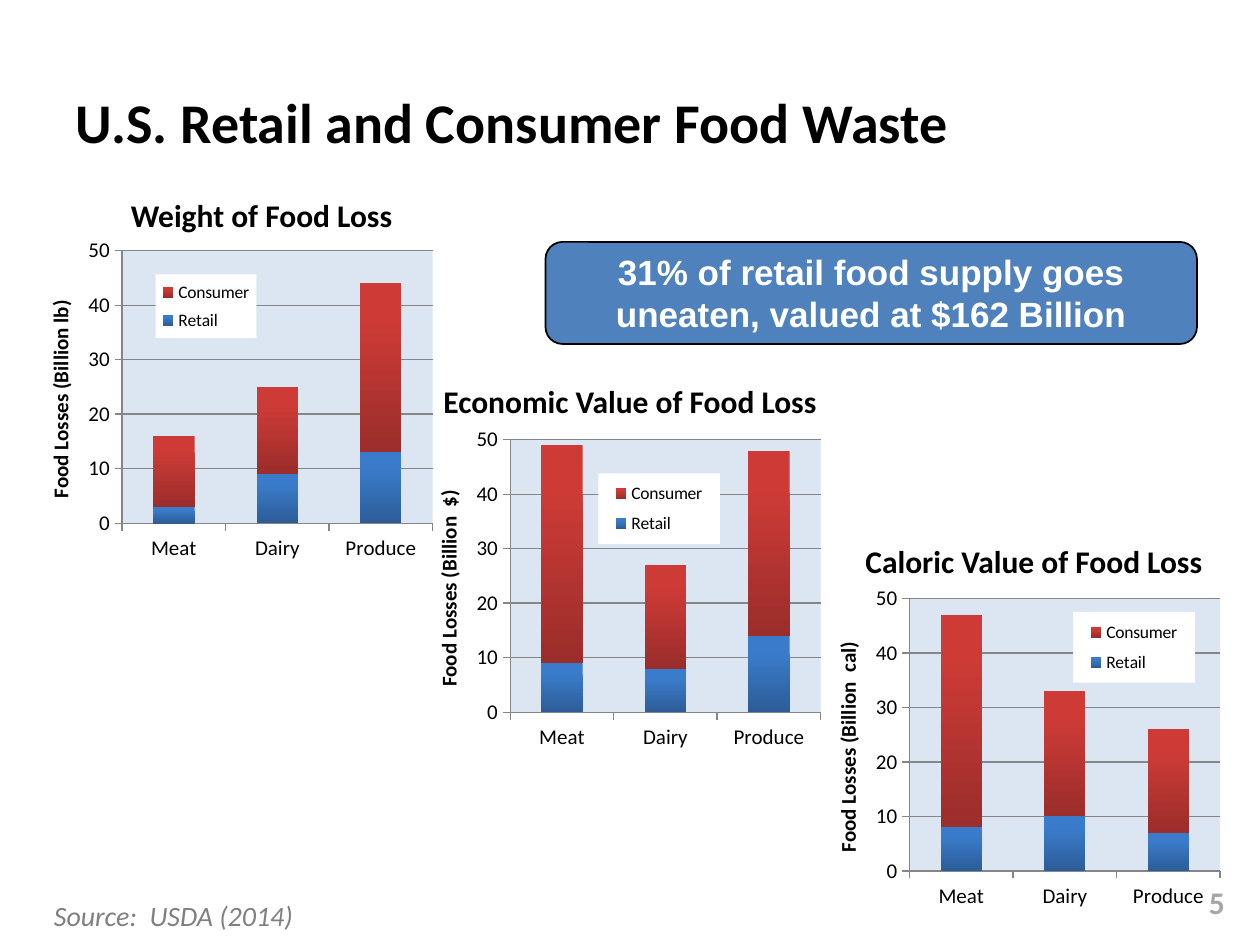
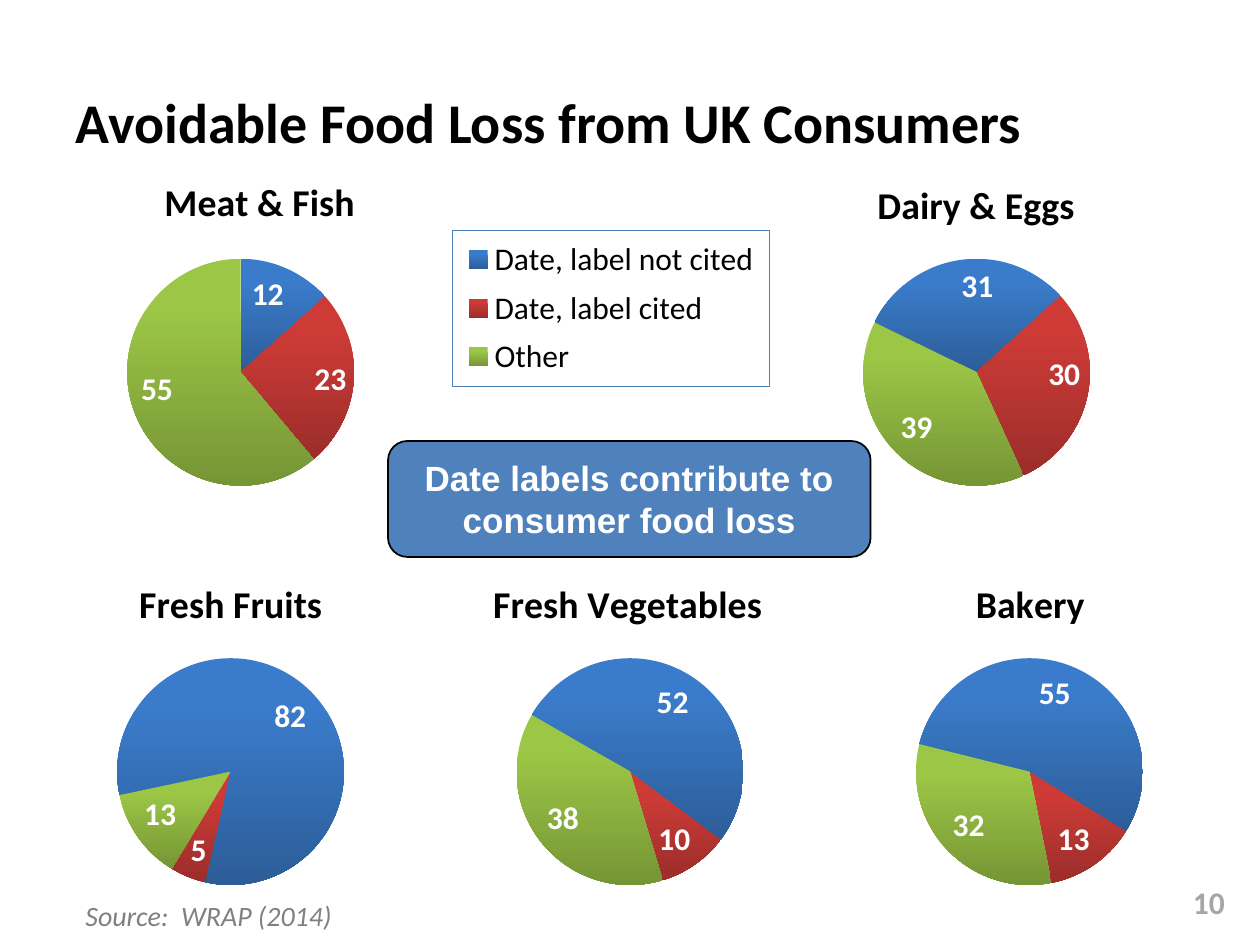
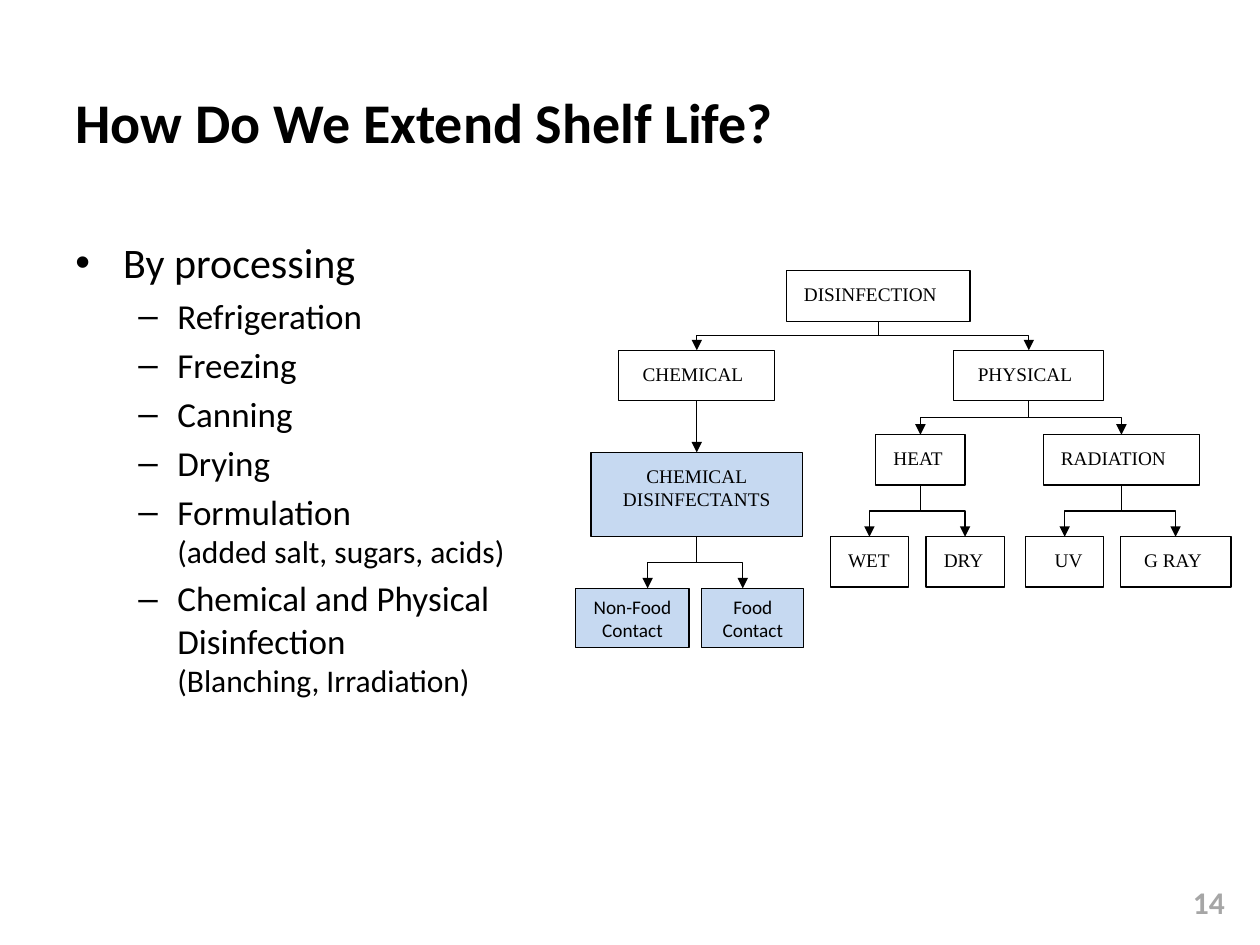
from lxml.etree import SubElement
from pptx import Presentation
from pptx.chart.data import CategoryChartData
from pptx.dml.color import RGBColor
from pptx.enum.chart import (XL_CHART_TYPE, XL_DATA_LABEL_POSITION,
                             XL_LEGEND_POSITION, XL_TICK_MARK)
from pptx.enum.shapes import MSO_CONNECTOR, MSO_SHAPE
from pptx.enum.text import MSO_ANCHOR, PP_ALIGN
from pptx.oxml import parse_xml
from pptx.oxml.ns import nsdecls, qn
from pptx.util import Inches, Pt

# Shared style
BLACK, WHITE, GREY, PAGE_GREY = "000000", "FFFFFF", "808080", "A6A6A6"
BLUE, PALE_BLUE, PLOT_BLUE, AXIS_GREY = "4F81BD", "C6D9F1", "DCE6F2", "868686"
BLUE_SHADES = ("3A7CCB", "2C5D98")
RED_SHADES = ("CE3B37", "9B2D2A")
GREEN_SHADES = ("9CC746", "769535")

# Slide 1: title, title box, axis unit, chart corner, legend box, retail, consumer
FOODS = ["Meat", "Dairy", "Produce"]
LOSS_CHARTS = [
    ("Weight of Food Loss", (0.94, 1.51, 2.3), "lb", (0.17, 1.83),
     (0.32, 0.13, 0.24, 0.19), (3, 9, 13), (13, 16, 31)),
    ("Economic Value of Food Loss", (3.42, 2.98, 3.19), " $", (3.25, 3.33),
     (0.45, 0.16, 0.29, 0.21), (9, 8, 14), (40, 19, 34)),
    ("Caloric Value of Food Loss", (6.77, 4.25, 2.9), " cal", (6.42, 4.59),
     (0.63, 0.1, 0.29, 0.21), (8, 10, 7), (39, 23, 19)),
]
LOSS_PLOT = (0.24, 0.06, 0.74, 0.81)

# Slide 2: title, chart corner, title place, plot left, first angle, values
REASONS = ["Date, label not cited", "Date, label cited", "Other"]
PIES = [
    ("Meat & Fish", (0.17, 1.25), (0.18, 0.03), 0.14, 0, (12, 23, 55)),
    ("Fresh Fruits", (-1.17, 4.42), (0.37, 0.04), 0.35, 258, (82, 5, 13)),
    ("Fresh Vegetables", (2, 4.42), (0.31, 0.04), 0.35, 300, (52, 10, 38)),
    ("Dairy & Eggs", (4.75, 1.25), (0.36, 0.04), 0.35, 296, (31, 30, 39)),
    ("Bakery", (5.17, 4.42), (0.42, 0.04), 0.35, 284, (55, 13, 32)),
]
REASON_LEGEND = (0.57, 0.21, 0.42, 0.45)

# Slide 3: each bullet is a level and its lines with their sizes
BULLETS = [
    (0, [("By processing", 24)]),
    (1, [("Refrigeration", 20)]),
    (1, [("Freezing", 20)]),
    (1, [("Canning", 20)]),
    (1, [("Drying", 20)]),
    (1, [("Formulation", 20), ("(added salt, sugars, acids)", 18)]),
    (1, [("Chemical and Physical", 20), ("Disinfection", 20),
         ("(Blanching, Irradiation)", 18)]),
]
BULLET_STYLES = [("•", 0.38, 0.38), ("–", 0.81, 0.31)]  # mark, indent, hang

# Left-aligned tree boxes: left, top, width, text inset
TREE_BOXES = {
    "DISINFECTION": (6.24, 2.15, 1.46, 0.14),
    "CHEMICAL": (4.91, 2.78, 1.24, 0.19),
    "PHYSICAL": (7.57, 2.78, 1.19, 0.19),
    "HEAT": (6.95, 3.45, 0.71, 0.14),
    "RADIATION": (8.28, 3.45, 1.24, 0.14),
    "WET": (6.59, 4.26, 0.62, 0.14),
    "DRY": (7.35, 4.26, 0.62, 0.14),
    "UV": (8.14, 4.26, 0.62, 0.23),
    "G RAY": (8.89, 4.26, 0.88, 0.19),
}
TREE_BOX_HEIGHT = 0.4
# Centred, tinted boxes: left, top, width, height, font, bottom inset
TINTED_BOXES = {
    "CHEMICAL\nDISINFECTANTS": (4.69, 3.59, 1.68, 0.67, "Times New Roman", 0.12),
    "Non-Food Contact": (4.57, 4.67, 0.9, 0.47, "Calibri", 0),
    "Food Contact": (5.57, 4.67, 0.81, 0.47, "Calibri", 0),
}
# Parent, child, shift of the arrow tip from the child's centre
BRANCHES = [
    ("DISINFECTION", "CHEMICAL", 0), ("DISINFECTION", "PHYSICAL", 0),
    ("PHYSICAL", "HEAT", 0), ("PHYSICAL", "RADIATION", 0),
    ("HEAT", "WET", 0), ("HEAT", "DRY", 0),
    ("RADIATION", "UV", 0), ("RADIATION", "G RAY", 0),
    ("CHEMICAL\nDISINFECTANTS", "Non-Food Contact", 0.12),
    ("CHEMICAL\nDISINFECTANTS", "Food Contact", -0.08),
]


def color(hex_string):
    return RGBColor.from_string(hex_string)


def style(font, size, hex_color=BLACK, name="Calibri", bold=False, italic=False):
    font.size, font.name, font.bold, font.italic = Pt(size), name, bold, italic
    font.color.rgb = color(hex_color)


def add_slide(presentation, title, page):
    slide = presentation.slides.add_slide(presentation.slide_layouts[5])
    shape = slide.shapes.title
    shape.left, shape.top, shape.width, shape.height = map(Inches, (0.5, 0.56, 7.92, 0.8))
    shape.text_frame.text = title
    shape.text_frame.vertical_anchor = MSO_ANCHOR.MIDDLE
    paragraph = shape.text_frame.paragraphs[0]
    paragraph.alignment = PP_ALIGN.LEFT
    style(paragraph.font, 32, bold=True)
    number = add_label(slide, str(page), (8.86, 6.96, 0.96, 0.4), 18,
                       hex_color=PAGE_GREY, bold=True)
    number.text_frame.vertical_anchor = MSO_ANCHOR.MIDDLE
    number.text_frame.paragraphs[0].alignment = PP_ALIGN.RIGHT
    return slide


def add_label(slide, text, box, size, **font_style):
    shape = slide.shapes.add_textbox(*map(Inches, box))
    shape.text_frame.text = text
    shape.text_frame.word_wrap = False
    style(shape.text_frame.paragraphs[0].font, size, **font_style)
    return shape


def add_source(slide, text, left, width):
    add_label(slide, text, (left, 7.08, width, 0.37), 16, hex_color=GREY, italic=True)


def add_box(slide, kind, text, box, fill=None, line_width=0.75,
            align=PP_ALIGN.CENTER, **font_style):
    shape = slide.shapes.add_shape(kind, *map(Inches, box))
    shape.shadow.inherit = False
    if fill:
        shape.fill.solid()
        shape.fill.fore_color.rgb = color(fill)
    else:
        shape.fill.background()
    shape.line.color.rgb = color(BLACK)
    shape.line.width = Pt(line_width)
    frame = shape.text_frame
    frame.text = text
    frame.word_wrap = True
    frame.vertical_anchor = MSO_ANCHOR.MIDDLE
    for paragraph in frame.paragraphs:
        paragraph.alignment = align
        style(paragraph.font, **font_style)
    return shape


def add_callout(slide, text, box):
    add_box(slide, MSO_SHAPE.ROUNDED_RECTANGLE, text, box, BLUE, 1,
            size=20, hex_color=WHITE, name="Arial", bold=True)


# Chart helpers
def shade(fill, shades):
    fill.gradient()
    fill.gradient_angle = 270
    for stop, hex_color in zip(fill.gradient_stops, shades):
        stop.color.rgb = color(hex_color)
    fill.gradient_stops[0].position = 0.2


def chart_fill(fill=None, line=None):
    def paint(hex_color):
        if not hex_color:
            return "<a:noFill/>"
        return f'<a:solidFill><a:srgbClr val="{hex_color}"/></a:solidFill>'
    return parse_xml(f'<c:spPr {nsdecls("c", "a")}>{paint(fill)}'
                     f'<a:ln>{paint(line)}</a:ln></c:spPr>')


def place(element, box, inner=False):
    """Give a chart part a fixed place, in fractions of the chart."""
    for old in element.findall(qn("c:layout")):
        element.remove(old)
    leading = [child for child in element
               if child.tag in (qn("c:tx"), qn("c:legendPos"))]
    layout = SubElement(element, qn("c:layout"))
    element.insert(len(leading), layout)
    manual = SubElement(layout, qn("c:manualLayout"))
    settings = [("layoutTarget", "inner")] if inner else []
    settings += [("xMode", "edge"), ("yMode", "edge"), *zip("xywh", box)]
    for tag, value in settings:
        SubElement(manual, qn(f"c:{tag}")).set("val", str(value))


def add_chart(slide, kind, categories, series, box, plot_box):
    data = CategoryChartData()
    data.categories = categories
    for name, values in series:
        data.add_series(name, values)
    chart = slide.shapes.add_chart(kind, *map(Inches, box), data).chart
    style(chart.font, 18)
    chart.has_title = chart.has_legend = False
    chart_element = chart._chartSpace.find(qn("c:chart"))
    chart_element.addnext(chart_fill())
    place(chart_element.find(qn("c:plotArea")), plot_box, inner=True)
    return chart


def add_legend(chart, position, box, size, overlay, fill=None, line=None):
    chart.has_legend = True
    legend = chart.legend
    legend.position = position
    legend.include_in_layout = overlay
    style(legend.font, size)
    place(legend._element, box)
    legend._element.find(qn("c:overlay")).addnext(chart_fill(fill, line))


def add_loss_chart(slide, unit, corner, legend_box, retail, consumer):
    chart = add_chart(slide, XL_CHART_TYPE.COLUMN_STACKED, FOODS,
                      [("Retail", retail), ("Consumer", consumer)],
                      (*corner, 3.33, 2.67), LOSS_PLOT)
    plot = chart.plots[0]
    plot.gap_width, plot.overlap, plot.vary_by_categories = 150, 100, False
    for series, shades in zip(plot.series, (BLUE_SHADES, RED_SHADES)):
        shade(series.format.fill, shades)
    for axis in (chart.category_axis, chart.value_axis):
        axis.major_tick_mark = XL_TICK_MARK.OUTSIDE
        axis.minor_tick_mark = XL_TICK_MARK.NONE
        axis.format.line.color.rgb = color(AXIS_GREY)
        axis.format.line.width = Pt(0.75)
        style(axis.tick_labels.font, 12)
    axis = chart.value_axis
    axis.minimum_scale, axis.maximum_scale, axis.major_unit = 0, 50, 10
    axis.has_major_gridlines = True
    axis.major_gridlines.format.line.color.rgb = color(AXIS_GREY)
    axis.major_gridlines.format.line.width = Pt(0.75)
    frame = axis.axis_title.text_frame
    frame.text = f"Food Losses (Billion {unit})"
    frame._txBody.bodyPr.set("rot", "-5400000")
    style(frame.paragraphs[0].font, 12, bold=True)
    chart._chartSpace.find(".//" + qn("c:plotArea")).append(chart_fill(PLOT_BLUE))
    add_legend(chart, XL_LEGEND_POSITION.CORNER, legend_box, 10, True, fill=WHITE)


def add_pie(slide, title, corner, title_place, plot_left, angle, values):
    first = title == PIES[0][0]
    chart = add_chart(slide, XL_CHART_TYPE.PIE, REASONS if first else ["1", "2", "3"],
                      [(title, values)], (*corner, 6, 2.75),
                      (plot_left, 0.29, 0.3, 0.66))
    chart.has_title = True
    frame = chart.chart_title.text_frame
    frame.text = title
    style(frame.paragraphs[0].font, 21.6, bold=True)
    place(chart.chart_title._element, title_place)
    plot = chart.plots[0]
    for index, shades in enumerate((BLUE_SHADES, RED_SHADES, GREEN_SHADES)):
        shade(plot.series[0].points[index].format.fill, shades)
    plot.has_data_labels = True
    labels = plot.data_labels
    labels.show_value = True
    labels.position = XL_DATA_LABEL_POSITION.INSIDE_END
    style(labels.font, 18, WHITE, bold=True)
    SubElement(plot._element, qn("c:firstSliceAng")).set("val", str(angle))
    if first:
        add_legend(chart, XL_LEGEND_POSITION.RIGHT, REASON_LEGEND, 18, False, line=BLUE)


# Text and tree helpers
def add_bullets(slide, box):
    frame = slide.shapes.add_textbox(*map(Inches, box)).text_frame
    frame.word_wrap = True
    for index, (level, lines) in enumerate(BULLETS):
        paragraph = frame.add_paragraph() if index else frame.paragraphs[0]
        mark, indent, hang = BULLET_STYLES[level]
        paragraph.level = level
        properties = paragraph._p.get_or_add_pPr()
        properties.set("marL", str(Inches(indent)))
        properties.set("indent", str(-Inches(hang)))
        SubElement(properties, qn("a:buFont")).set("typeface", "Arial")
        SubElement(properties, qn("a:buChar")).set("char", mark)
        if index:
            paragraph.space_before = Pt(0.2 * lines[0][1])
        style(paragraph.font, lines[0][1])
        for position, (text, size) in enumerate(lines):
            if position:
                paragraph.add_line_break()
            run = paragraph.add_run()
            run.text = text
            run.font.size = Pt(size)


def finish_arrow(connector):
    connector.line.color.rgb = color(BLACK)
    connector.line.width = Pt(0.75)
    SubElement(connector.line._get_or_add_ln(), qn("a:tailEnd")).set("type", "triangle")
    SubElement(connector._element.spPr, qn("a:effectLst"))


def add_branch(slide, parent, child, shift):
    """Elbow arrow that leaves the parent downwards: a turned connector."""
    start_x, start_y = parent.left + parent.width // 2, parent.top + parent.height
    end_x, end_y = child.left + child.width // 2 + Inches(shift), child.top
    length, spread = end_y - start_y, abs(end_x - start_x)
    left = (start_x + end_x - length) // 2
    top = (start_y + end_y - spread) // 2
    connector = slide.shapes.add_connector(MSO_CONNECTOR.ELBOW, left, top,
                                           left + length, top + spread)
    frame = connector._element.spPr.find(qn("a:xfrm"))
    if end_x < start_x:
        frame.set("rot", "5400000")
    else:
        frame.set("rot", "16200000")
        frame.set("flipH", "1")
    finish_arrow(connector)


def add_tree(slide):
    boxes = {}
    for text, (left, top, width, inset) in TREE_BOXES.items():
        shape = add_box(slide, MSO_SHAPE.RECTANGLE, text,
                        (left, top, width, TREE_BOX_HEIGHT), align=PP_ALIGN.LEFT,
                        size=11, name="Times New Roman")
        shape.text_frame.margin_left = Inches(inset)
        shape.text_frame.margin_right = 0
        shape.text_frame.margin_bottom = Inches(0.08)
        boxes[text] = shape
    for text, (*box, font_name, inset) in TINTED_BOXES.items():
        shape = add_box(slide, MSO_SHAPE.RECTANGLE, text, box, PALE_BLUE,
                        size=11, name=font_name)
        shape.text_frame.margin_top = 0
        shape.text_frame.margin_bottom = Inches(inset)
        boxes[text] = shape
    for parent, child, shift in BRANCHES:
        add_branch(slide, boxes[parent], boxes[child], shift)
    arrow = slide.shapes.add_connector(MSO_CONNECTOR.STRAIGHT, 0, 0, 0, 0)
    arrow.begin_connect(boxes["CHEMICAL"], 2)
    arrow.end_connect(boxes["CHEMICAL\nDISINFECTANTS"], 0)
    finish_arrow(arrow)


def main():
    presentation = Presentation()
    presentation.slide_width, presentation.slide_height = Inches(10), Inches(7.5)

    # Food waste by weight, value and calories
    slide = add_slide(presentation, "U.S. Retail and Consumer Food Waste", 5)
    for _, _, *chart in LOSS_CHARTS:
        add_loss_chart(slide, *chart)
    for title, title_box, *_ in LOSS_CHARTS:
        add_label(slide, title, (*title_box, 0.4), 18, bold=True)
    add_source(slide, "Source:  USDA (2014)", 0.33, 2.13)
    add_callout(slide, "31% of retail food supply goes uneaten, valued at $162 Billion",
                (4.33, 1.92, 5.17, 0.81))

    # Reasons for loss by food group
    slide = add_slide(presentation, "Avoidable Food Loss from UK Consumers", 10)
    for pie in PIES:
        add_pie(slide, *pie)
    add_source(slide, "Source:  WRAP (2014)", 0.58, 2.2)
    add_callout(slide, "Date labels contribute to consumer food loss",
                (3.08, 3.5, 3.83, 0.92))

    # Processing methods and the disinfection tree
    slide = add_slide(presentation, "How Do We Extend Shelf Life?", 14)
    add_bullets(slide, (0.5, 1.83, 4, 3.97))
    add_tree(slide)

    presentation.save("out.pptx")


if __name__ == "__main__":
    main()
